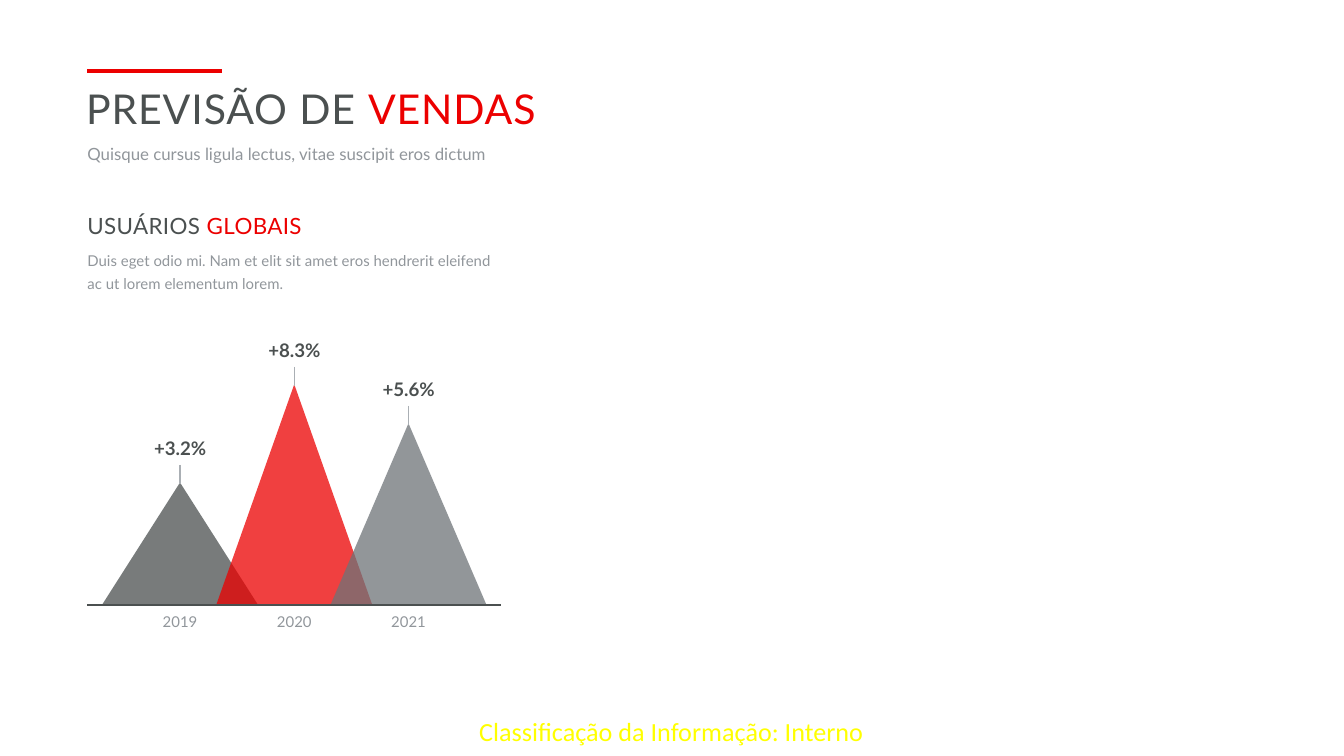
from lxml import etree
from pptx import Presentation
from pptx.dml.color import RGBColor
from pptx.enum.shapes import MSO_CONNECTOR
from pptx.enum.text import MSO_ANCHOR, MSO_AUTO_SIZE, PP_ALIGN
from pptx.oxml.ns import qn
from pptx.util import Inches, Pt

STRAIGHT = MSO_CONNECTOR.STRAIGHT
TOP, MIDDLE = MSO_ANCHOR.TOP, MSO_ANCHOR.MIDDLE
LEFT, CENTER = PP_ALIGN.LEFT, PP_ALIGN.CENTER
NO_AUTOFIT = MSO_AUTO_SIZE.NONE

DARK, RED, GRAY = "4B5050", "EC0000", "91969B"
SLATE, SILVER, YELLOW = "6E7378", "AAAFB4", "FFFF00"

MARGIN = 0.65
BASELINE = 4.5
FIRST_CENTER, CENTER_STEP = 1.34, 0.85
HALF_BASE = 0.58
LABEL_WIDTH = 0.73
PEAKS = [
    ("2019", "+3.2%", 3.46, DARK),
    ("2020", "+8.3%", 2.73, RED),
    ("2021", "+5.6%", 3.02, SLATE),
]


def color(value):
    """Return the colour for a hex string."""
    return RGBColor.from_string(value)


def write_text(shape, runs, size, font="Lato", bold=False, align=LEFT,
               anchor=TOP, line_spacing=None, letter_spacing=0):
    """Fill a shape with one paragraph of (text, colour) runs."""
    frame = shape.text_frame
    frame.margin_left = frame.margin_right = 0
    frame.margin_top = frame.margin_bottom = 0
    frame.word_wrap = True
    frame.auto_size = NO_AUTOFIT
    frame.vertical_anchor = anchor
    paragraph = frame.paragraphs[0]
    paragraph.alignment = align
    if line_spacing:
        paragraph.line_spacing = line_spacing
    for text, run_color in runs:
        run = paragraph.add_run()
        run.text = text
        run.font.name = font
        run.font.size = Pt(size)
        run.font.bold = bold
        run.font.color.rgb = color(run_color)
        if letter_spacing:
            run._r.get_or_add_rPr().set("spc", str(round(letter_spacing * 100)))


def add_text(slide, left, top, width, height, runs, size, **text_format):
    """Add a text box with formatted runs."""
    box = slide.shapes.add_textbox(
        Inches(left), Inches(top), Inches(width), Inches(height))
    write_text(box, runs, size, **text_format)


def add_title(slide, left, top, width, height, runs, size, **text_format):
    """Place and fill the title placeholder."""
    title = slide.shapes.title
    title.left, title.top = Inches(left), Inches(top)
    title.width, title.height = Inches(width), Inches(height)
    write_text(title, runs, size, **text_format)


def add_line(slide, start, end, line_color, width):
    """Add a straight line without shadow."""
    line = slide.shapes.add_connector(
        STRAIGHT, *(Inches(value) for value in (*start, *end)))
    line.line.color.rgb = color(line_color)
    line.line.width = Pt(width)
    etree.SubElement(line._element.spPr, qn("a:effectLst"))


def add_triangle(slide, center, apex, fill_color, opacity=75):
    """Add a translucent triangle standing on the baseline."""
    corners = [(center + HALF_BASE, BASELINE), (center - HALF_BASE, BASELINE)]
    builder = slide.shapes.build_freeform(Inches(center), Inches(apex))
    builder.add_line_segments([(Inches(x), Inches(y)) for x, y in corners])
    triangle = builder.convert_to_shape()
    triangle.shadow.inherit = False
    triangle.line.fill.background()
    triangle.fill.solid()
    triangle.fill.fore_color.rgb = color(fill_color)
    fill = triangle._element.spPr.find(qn("a:solidFill"))
    etree.SubElement(fill[0], qn("a:alpha"), val=str(opacity * 1000))


def add_peak(slide, center, year, growth, stem_top, fill_color):
    """Add one year's triangle with its stem and labels."""
    left = center - LABEL_WIDTH / 2
    add_triangle(slide, center, stem_top + 0.13, fill_color)
    add_line(slide, (center, stem_top), (center, stem_top + 0.14), SILVER, 0.75)
    add_text(slide, left, stem_top - 0.21, LABEL_WIDTH, 0.17,
             [(growth, DARK)], 10, bold=True, align=CENTER)
    add_text(slide, left, 4.56, LABEL_WIDTH, 0.13,
             [(year, GRAY)], 8, align=CENTER)


def main():
    """Build the sales forecast slide."""
    presentation = Presentation()
    presentation.slide_width = Inches(10)
    presentation.slide_height = Inches(10) * 9 // 16
    slide = presentation.slides.add_slide(presentation.slide_layouts[5])

    add_text(slide, 3.34, 5.26, 3.31, 0.36,
             [("Classificação da Informação: Interno", YELLOW)], 14,
             font="Calibri", align=CENTER, anchor=MIDDLE)
    add_title(slide, 0.64, 0.62, 3.59, 0.37,
              [("PREVISÃO DE ", DARK), ("VENDAS", RED)], 22, letter_spacing=0.5)
    add_line(slide, (MARGIN, 0.53), (MARGIN + 1, 0.53), RED, 2.25)
    add_text(slide, MARGIN, 1.05, 3.59, 0.15,
             [("Quisque cursus ligula lectus, vitae suscipit eros dictum", GRAY)],
             9, line_spacing=Pt(12))
    add_text(slide, MARGIN, 1.58, 3.12, 0.2,
             [("USUÁRIOS ", DARK), ("GLOBAIS", RED)], 12, letter_spacing=0.2)
    add_text(slide, MARGIN, 1.83, 3.12, 0.33,
             [("Duis eget odio mi. Nam et elit sit amet eros hendrerit eleifend "
               "ac ut lorem elementum lorem.", GRAY)], 8, line_spacing=1.3)

    for index, peak in enumerate(PEAKS):
        add_peak(slide, FIRST_CENTER + index * CENTER_STEP, *peak)
    add_line(slide, (MARGIN, BASELINE), (3.73, BASELINE), DARK, 1)

    presentation.save("out.pptx")


if __name__ == "__main__":
    main()
